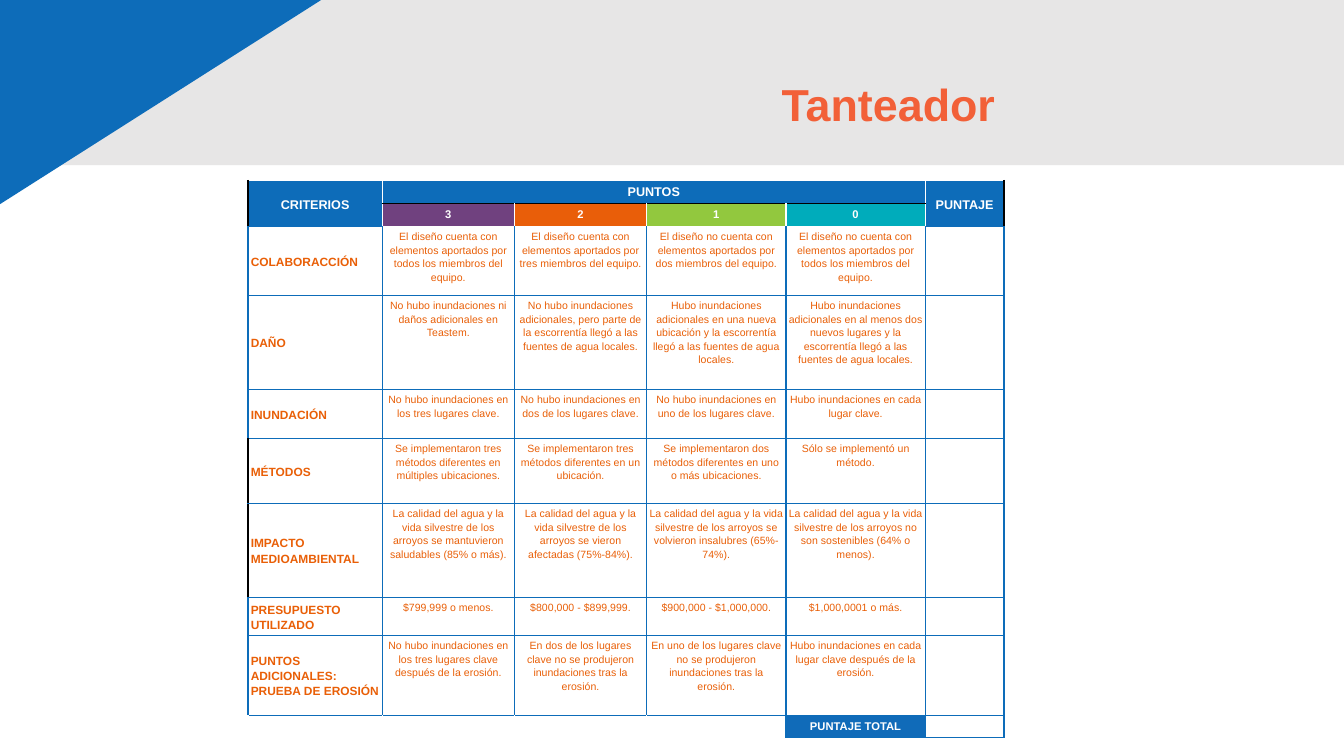
from dataclasses import dataclass
from typing import Any, Optional

import lxml.etree
import pptx
import pptx.dml.color
import pptx.enum.shapes
import pptx.enum.text
import pptx.oxml.ns
import pptx.util

ALIGN = pptx.enum.text.PP_ALIGN
ANCHOR = pptx.enum.text.MSO_ANCHOR
PRESET = pptx.enum.shapes.MSO_SHAPE
Pt = pptx.util.Pt


@dataclass(frozen=True)
class Theme:
    font: str = "Arial"
    blue: str = "0D6CB9"
    total_blue: str = "106BB9"
    gray: str = "E7E6E6"
    coral: str = "F26038"
    orange: str = "E95F07"
    white: str = "FFFFFF"
    black: str = "000000"
    scale: tuple[str, ...] = ("70417F", "E95E09", "92C83E", "00ACBB")
    title_size: float = 32
    header_size: float = 9
    criterion_size: float = 8.5
    score_size: float = 8
    body_size: float = 7.5


THEME = Theme()


@dataclass(frozen=True)
class Frame:
    """Percentages of the slide's width and height."""
    left: float
    top: float
    width: float
    height: float


@dataclass(frozen=True)
class Decoration:
    frame: Frame
    preset: Any
    color: str
    rotation: float = 0
    mirrored: bool = False


@dataclass(frozen=True)
class CellStyle:
    size: float
    color: str
    bold: bool = False
    fill: str = THEME.white
    align: Any = ALIGN.CENTER
    anchor: Any = ANCHOR.TOP
    borders: tuple[str, str, str, str] = (THEME.blue,) * 4


@dataclass(frozen=True)
class Criterion:
    name: str
    levels: tuple[str, str, str, str]
    left_border: str = THEME.blue


DECORATIONS = (
    Decoration(Frame(-1.95, -2.53, 101.95, 24.4), PRESET.RECTANGLE, THEME.gray),
    Decoration(Frame(-19.28, -22.93, 63.47, 71.73), PRESET.RIGHT_TRIANGLE,
               THEME.blue, 180, True),
)
TITLE_FRAME = Frame(2.03, 4.53, 72.77, 19.33)
RUBRIC_FRAME = Frame(18.45, 23.87, 56.26, 73.73)
COLUMN_WEIGHTS = (133, 131, 131, 138, 138, 78)
ROW_WEIGHTS = (23, 23, 68, 93, 49, 64, 93, 38, 79, 22)

CRITERIA = (
    Criterion("COLABORACCIÓN", (
        "El diseño cuenta con elementos aportados por todos los miembros del equipo.",
        "El diseño cuenta con elementos aportados por tres miembros del equipo.",
        "El diseño no cuenta con elementos aportados por dos miembros del equipo.",
        "El diseño no cuenta con elementos aportados por todos los miembros del equipo.")),
    Criterion("DAÑO", (
        "No hubo inundaciones ni daños adicionales en Teastem.",
        "No hubo inundaciones adicionales, pero parte de la escorrentía llegó a las fuentes de agua locales.",
        "Hubo inundaciones adicionales en una nueva ubicación y la escorrentía llegó a las fuentes de agua locales.",
        "Hubo inundaciones adicionales en al menos dos nuevos lugares y la escorrentía llegó a las fuentes de agua locales.")),
    Criterion("INUNDACIÓN", (
        "No hubo inundaciones en los tres lugares clave.",
        "No hubo inundaciones en dos de los lugares clave.",
        "No hubo inundaciones en uno de los lugares clave.",
        "Hubo inundaciones en cada lugar clave.")),
    Criterion("MÉTODOS", (
        "Se implementaron tres métodos diferentes en múltiples ubicaciones.",
        "Se implementaron tres métodos diferentes en un ubicación.",
        "Se implementaron dos métodos diferentes en uno o más ubicaciones.",
        "Sólo se implementó un método."), THEME.black),
    Criterion("IMPACTO MEDIOAMBIENTAL", (
        "La calidad del agua y la vida silvestre de los arroyos se mantuvieron saludables (85% o más).",
        "La calidad del agua y la vida silvestre de los arroyos se vieron afectadas (75%-84%).",
        "La calidad del agua y la vida silvestre de los arroyos se volvieron insalubres (65%-74%).",
        "La calidad del agua y la vida silvestre de los arroyos no son sostenibles (64% o menos)."), THEME.black),
    Criterion("PRESUPUESTO UTILIZADO", (
        "$799,999 o menos.", "$800,000 - $899,999.",
        "$900,000 - $1,000,000.", "$1,000,0001 o más.")),
    Criterion("PUNTOS ADICIONALES: PRUEBA DE EROSIÓN", (
        "No hubo inundaciones en los tres lugares clave después de la erosión.",
        "En dos de los lugares clave no se produjeron inundaciones tras la erosión.",
        "En uno de los lugares clave no se produjeron inundaciones tras la erosión.",
        "Hubo inundaciones en cada lugar clave después de la erosión.")),
)


def rgb(color: str) -> pptx.dml.color.RGBColor:
    return pptx.dml.color.RGBColor.from_string(color)


def assign(target: Any, values: dict[str, Any]) -> None:
    for name, value in values.items():
        setattr(target, name, value)


def place(frame: Frame, deck: Any) -> dict[str, int]:
    return {"left": round(deck.slide_width * frame.left / 100),
            "top": round(deck.slide_height * frame.top / 100),
            "width": round(deck.slide_width * frame.width / 100),
            "height": round(deck.slide_height * frame.height / 100)}


def write(paragraph: Any, text: str, size: float, color: str, bold: bool) -> None:
    run = paragraph.add_run()
    run.text = text
    assign(run.font, {"name": THEME.font, "size": Pt(size), "bold": bold})
    run.font.color.rgb = rgb(color)


def draw_decoration(slide: Any, deck: Any, decoration: Decoration) -> None:
    shape = slide.shapes.add_shape(decoration.preset, **place(decoration.frame, deck))
    shape.rotation = decoration.rotation
    shape.shadow.inherit = False
    shape.fill.solid()
    shape.fill.fore_color.rgb = rgb(decoration.color)
    shape.line.fill.background()
    if decoration.mirrored:
        shape._element.spPr.xfrm.set("flipH", "1")


def draw_title(slide: Any, deck: Any) -> None:
    heading = slide.shapes.title
    assign(heading, place(TITLE_FRAME, deck))
    assign(heading.text_frame, {"word_wrap": True, "vertical_anchor": ANCHOR.MIDDLE})
    paragraph = heading.text_frame.paragraphs[0]
    assign(paragraph, {"alignment": ALIGN.RIGHT, "line_spacing": 0.9})
    write(paragraph, "Tanteador", THEME.title_size, THEME.coral, True)
    slide.shapes._spTree.append(heading._element)


def set_borders(cell: Any, colors: tuple[str, str, str, str]) -> None:
    qn = pptx.oxml.ns.qn
    properties = cell._tc.get_or_add_tcPr()
    for index, (side, color) in enumerate(zip(("lnL", "lnR", "lnT", "lnB"), colors)):
        edge = lxml.etree.Element(qn(f"a:{side}"), w=str(Pt(1)))
        paint = lxml.etree.SubElement(edge, qn("a:solidFill"))
        lxml.etree.SubElement(paint, qn("a:srgbClr"), val=color)
        properties.insert(index, edge)


def fill_cell(cell: Any, text: Optional[str], style: CellStyle) -> None:
    margin = Pt(2)
    assign(cell, {"margin_left": margin, "margin_right": margin, "margin_top": margin,
                  "margin_bottom": margin, "vertical_anchor": style.anchor})
    cell.fill.solid()
    cell.fill.fore_color.rgb = rgb(style.fill)
    set_borders(cell, style.borders)
    paragraph = cell.text_frame.paragraphs[0]
    assign(paragraph, {"alignment": style.align, "line_spacing": 1.15})
    if text:
        write(paragraph, text, style.size, style.color, style.bold)
    else:
        lxml.etree.SubElement(paragraph._p, pptx.oxml.ns.qn("a:endParaRPr"),
                              sz=str(round(style.size * 100)))


def draw_rubric(slide: Any, deck: Any) -> None:
    area = place(RUBRIC_FRAME, deck)
    rubric = slide.shapes.add_table(len(ROW_WEIGHTS), len(COLUMN_WEIGHTS), **area).table
    assign(rubric, {"first_row": False, "horz_banding": False})
    for column, weight in zip(rubric.columns, COLUMN_WEIGHTS):
        column.width = round(area["width"] * weight / sum(COLUMN_WEIGHTS))
    for row, weight in zip(rubric.rows, ROW_WEIGHTS):
        row.height = round(area["height"] * weight / sum(ROW_WEIGHTS))

    white, black, blue = THEME.white, THEME.black, THEME.blue

    def header(anchor: Any, *borders: str) -> CellStyle:
        return CellStyle(THEME.header_size, white, True, blue, anchor=anchor, borders=borders)

    criteria_head = header(ANCHOR.MIDDLE, black, white, white, blue)
    points_head = header(ANCHOR.TOP, white, white, white, black)
    score_head = header(ANCHOR.MIDDLE, white, black, white, blue)
    body = CellStyle(THEME.body_size, THEME.orange)
    first_body = CellStyle(THEME.body_size, THEME.orange, borders=(blue, blue, white, blue))

    fill_cell(rubric.cell(0, 0), "CRITERIOS", criteria_head)
    fill_cell(rubric.cell(1, 0), None, criteria_head)
    fill_cell(rubric.cell(0, 5), "PUNTAJE", score_head)
    fill_cell(rubric.cell(1, 5), None, score_head)
    for column, color in enumerate(THEME.scale, 1):
        fill_cell(rubric.cell(0, column), "PUNTOS" if column == 1 else None, points_head)
        fill_cell(rubric.cell(1, column), str(4 - column),
                  CellStyle(THEME.score_size, white, True, color,
                            borders=(white, white, black, white)))
    for start, end in (((0, 0), (1, 0)), ((0, 1), (0, 4)), ((0, 5), (1, 5))):
        rubric.cell(*start).merge(rubric.cell(*end))

    for row, criterion in enumerate(CRITERIA, 2):
        fill_cell(rubric.cell(row, 0), criterion.name,
                  CellStyle(THEME.criterion_size, THEME.orange, True, align=ALIGN.LEFT,
                            anchor=ANCHOR.MIDDLE,
                            borders=(criterion.left_border, blue, blue, blue)))
        for column, level in enumerate(criterion.levels, 1):
            fill_cell(rubric.cell(row, column), level, first_body if row == 2 else body)
        fill_cell(rubric.cell(row, 5), None, body)

    last = len(ROW_WEIGHTS) - 1
    for column in range(4):
        right = blue if column == 3 else white
        fill_cell(rubric.cell(last, column), None,
                  CellStyle(THEME.body_size, white, borders=(white, right, blue, white)))
    fill_cell(rubric.cell(last, 4), "PUNTAJE TOTAL",
              CellStyle(THEME.score_size, white, True, THEME.total_blue))
    fill_cell(rubric.cell(last, 5), None, body)


def main() -> None:
    deck = pptx.Presentation()
    assign(deck, {"slide_width": pptx.util.Inches(13.33),
                  "slide_height": pptx.util.Inches(7.5)})
    slide = deck.slides.add_slide(deck.slide_layouts[5])
    for decoration in DECORATIONS:
        draw_decoration(slide, deck, decoration)
    draw_title(slide, deck)
    draw_rubric(slide, deck)
    deck.save("out.pptx")


if __name__ == "__main__":
    main()
